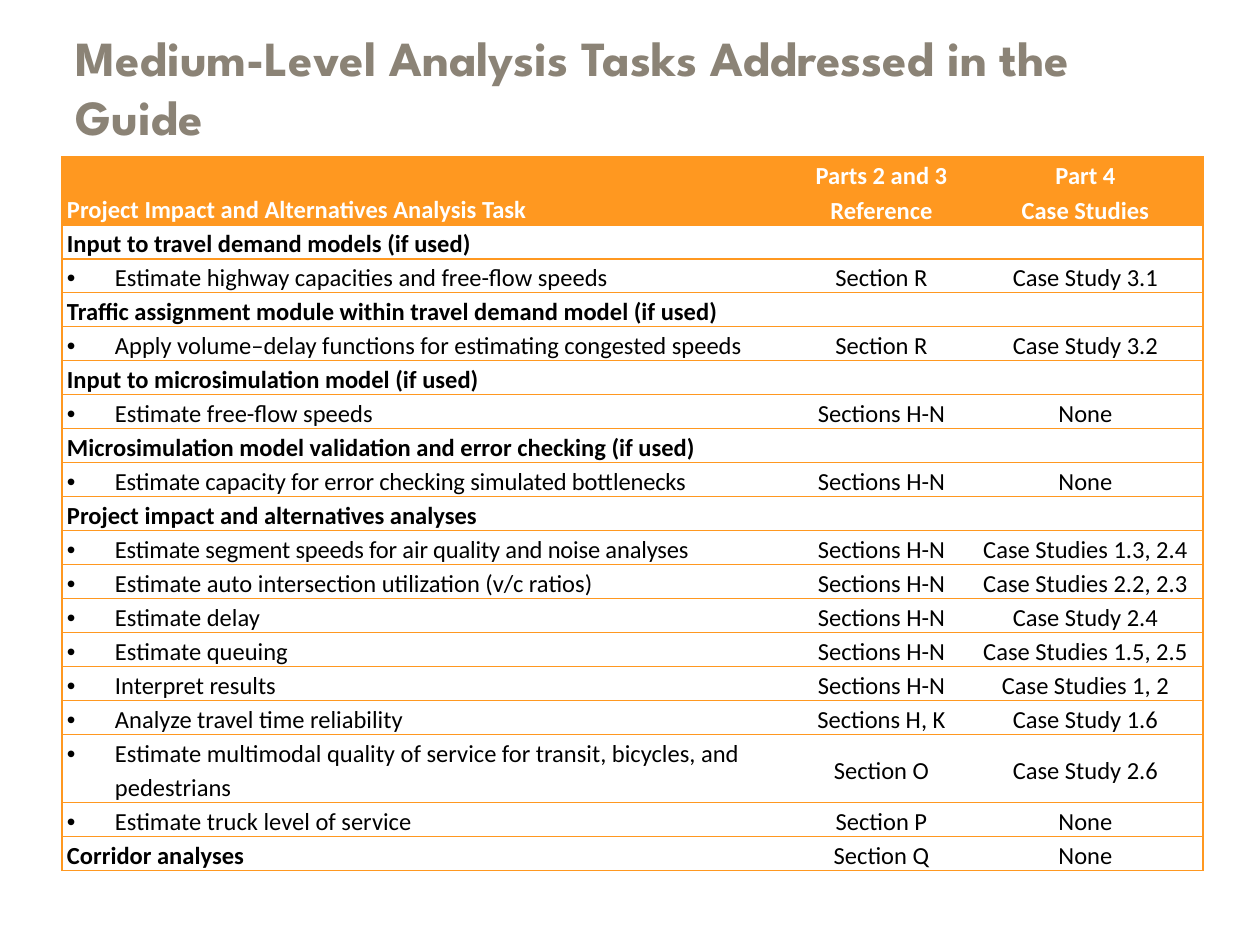
from dataclasses import dataclass

import lxml.etree
import pptx
import pptx.dml.color
import pptx.enum.text
import pptx.oxml.ns
import pptx.util

PX = 914400 // 126  # EMU in one px
QN = pptx.oxml.ns.qn
ALIGN = pptx.enum.text.PP_ALIGN
ANCHOR = pptx.enum.text.MSO_ANCHOR


@dataclass(frozen=True)
class Theme:
    head: str = "8B8376"
    accent: str = "FF9820"
    ink: str = "000000"
    paper: str = "FFFFFF"
    title: int = 28
    body: int = 14
    title_font: str = "League Spartan"
    body_font: str = "Calibri"


@dataclass(frozen=True)
class Row:
    task: str
    ref: str = ""
    case: str = ""
    group: bool = False
    tight: bool = False
    lines: int = 1


THEME = Theme()
HEADER = Row("Project Impact and Alternatives Analysis Task",
             "Parts 2 and 3 Reference", "Part 4\vCase Studies", lines=2)
ROWS = [
    Row("Input to travel demand models (if used)", group=True),
    Row("Estimate highway capacities and free-flow speeds", "Section R", "Case Study 3.1"),
    Row("Traffic assignment module within travel demand model (if used)", group=True),
    Row("Apply volume–delay functions for estimating congested speeds",
        "Section R", "Case Study 3.2"),
    Row("Input to microsimulation model (if used)", group=True),
    Row("Estimate free-flow speeds", "Sections H-N", "None"),
    Row("Microsimulation model validation and error checking (if used)", group=True),
    Row("Estimate capacity for error checking simulated bottlenecks",
        "Sections H-N", "None", tight=True),
    Row("Project impact and alternatives analyses", group=True),
    Row("Estimate segment speeds for air quality and noise analyses",
        "Sections H-N", "Case Studies 1.3, 2.4", tight=True),
    Row("Estimate auto intersection utilization (v/c ratios)",
        "Sections H-N", "Case Studies 2.2, 2.3"),
    Row("Estimate delay", "Sections H-N", "Case Study 2.4"),
    Row("Estimate queuing", "Sections H-N", "Case Studies 1.5, 2.5"),
    Row("Interpret results", "Sections H-N", "Case Studies 1, 2"),
    Row("Analyze travel time reliability", "Sections H, K", "Case Study 1.6"),
    Row("Estimate multimodal quality of service for transit, bicycles, and pedestrians",
        "Section O", "Case Study 2.6", lines=2),
    Row("Estimate truck level of service", "Section P", "None"),
    Row("Corridor analyses", "Section Q", "None", group=True),
]
COLS = (733, 173, 235)
LINE = 34
INDENT = 48


def rgb(code: str) -> pptx.dml.color.RGBColor:
    return pptx.dml.color.RGBColor.from_string(code)


def write(frame, text: str, *, size: int = THEME.body, font: str = THEME.body_font,
          color: str = THEME.ink, bold: bool = False, align=ALIGN.LEFT,
          space: float | None = None, bullet: bool = False, tight: bool = False) -> None:
    para = frame.paragraphs[0]
    para.text = text
    para.alignment = align
    para.line_spacing = space
    if bullet:
        props = para._p.get_or_add_pPr()
        props.set("marL", str(INDENT * PX))
        props.set("indent", str(-INDENT * PX))
        lxml.etree.SubElement(props, QN("a:buFont"), typeface="Arial")
        lxml.etree.SubElement(props, QN("a:buChar"), char="•")
    for run in para.runs:
        run.font.size = pptx.util.Pt(size)
        run.font.name = font
        run.font.bold = bold
        run.font.color.rgb = rgb(color)
        if tight:
            run._r.get_or_add_rPr().set("spc", "-10")
    # Line breaks and empty cells need the size too, or they stretch the row.
    for gap in para._p.findall(QN("a:br")):
        lxml.etree.SubElement(gap, QN("a:rPr"), sz=str(size * 100))
    if not text:
        lxml.etree.SubElement(para._p, QN("a:endParaRPr"), sz=str(size * 100))


def edge(cell, side: str, shown: bool) -> None:
    line = lxml.etree.SubElement(cell._tc.get_or_add_tcPr(), QN(f"a:ln{side}"),
                                 w=str(pptx.util.Pt(0.75)))
    if shown:
        fill = lxml.etree.SubElement(line, QN("a:solidFill"))
        lxml.etree.SubElement(fill, QN("a:srgbClr"), val=THEME.accent)
    else:
        lxml.etree.SubElement(line, QN("a:noFill"))


def fill_row(table, index: int, row: Row) -> None:
    top = row is HEADER
    table.rows[index].height = row.lines * LINE * PX
    for col, text in enumerate((row.task, row.ref, row.case)):
        cell = table.cell(index, col)
        first = col == 0
        cell.margin_left = cell.margin_right = 5 * PX
        cell.margin_top = cell.margin_bottom = 0
        if not top:
            cell.vertical_anchor = ANCHOR.MIDDLE
        elif first:
            cell.vertical_anchor = ANCHOR.BOTTOM
        for side, shown in (("L", first), ("R", col == len(COLS) - 1),
                            ("T", True), ("B", True)):
            edge(cell, side, shown)
        cell.fill.solid()
        cell.fill.fore_color.rgb = rgb(THEME.accent if top else THEME.paper)
        write(cell.text_frame, text, space=1.15,
              color=THEME.paper if top else THEME.ink,
              bold=top or (first and row.group),
              align=ALIGN.LEFT if first else ALIGN.CENTER,
              bullet=first and not (top or row.group),
              tight=first and row.tight)


def add_title(slide) -> None:
    title = slide.shapes.title
    title.left, title.top, title.width, title.height = (
        n * PX for n in (63, 21, 1134, 131))
    frame = title.text_frame
    frame.word_wrap = True
    frame.auto_size = pptx.enum.text.MSO_AUTO_SIZE.SHAPE_TO_FIT_TEXT
    frame.vertical_anchor = ANCHOR.MIDDLE
    write(frame, "Medium-Level Analysis Tasks Addressed in the Guide",
          size=THEME.title, font=THEME.title_font, color=THEME.head, bold=True)


def add_tasks(slide) -> None:
    rows = [HEADER, *ROWS]
    high = sum(row.lines for row in rows) * LINE
    table = slide.shapes.add_table(len(rows), len(COLS), 62 * PX, 157 * PX,
                                   sum(COLS) * PX, high * PX).table
    table.first_row = table.horz_banding = False
    for col, width in zip(table.columns, COLS):
        col.width = width * PX
    for index, row in enumerate(rows):
        fill_row(table, index, row)


def main() -> None:
    deck = pptx.Presentation()
    deck.slide_width = pptx.util.Inches(10)
    deck.slide_height = pptx.util.Inches(7.5)
    slide = deck.slides.add_slide(deck.slide_layouts[5])
    add_title(slide)
    add_tasks(slide)
    deck.save("out.pptx")


if __name__ == "__main__":
    main()
